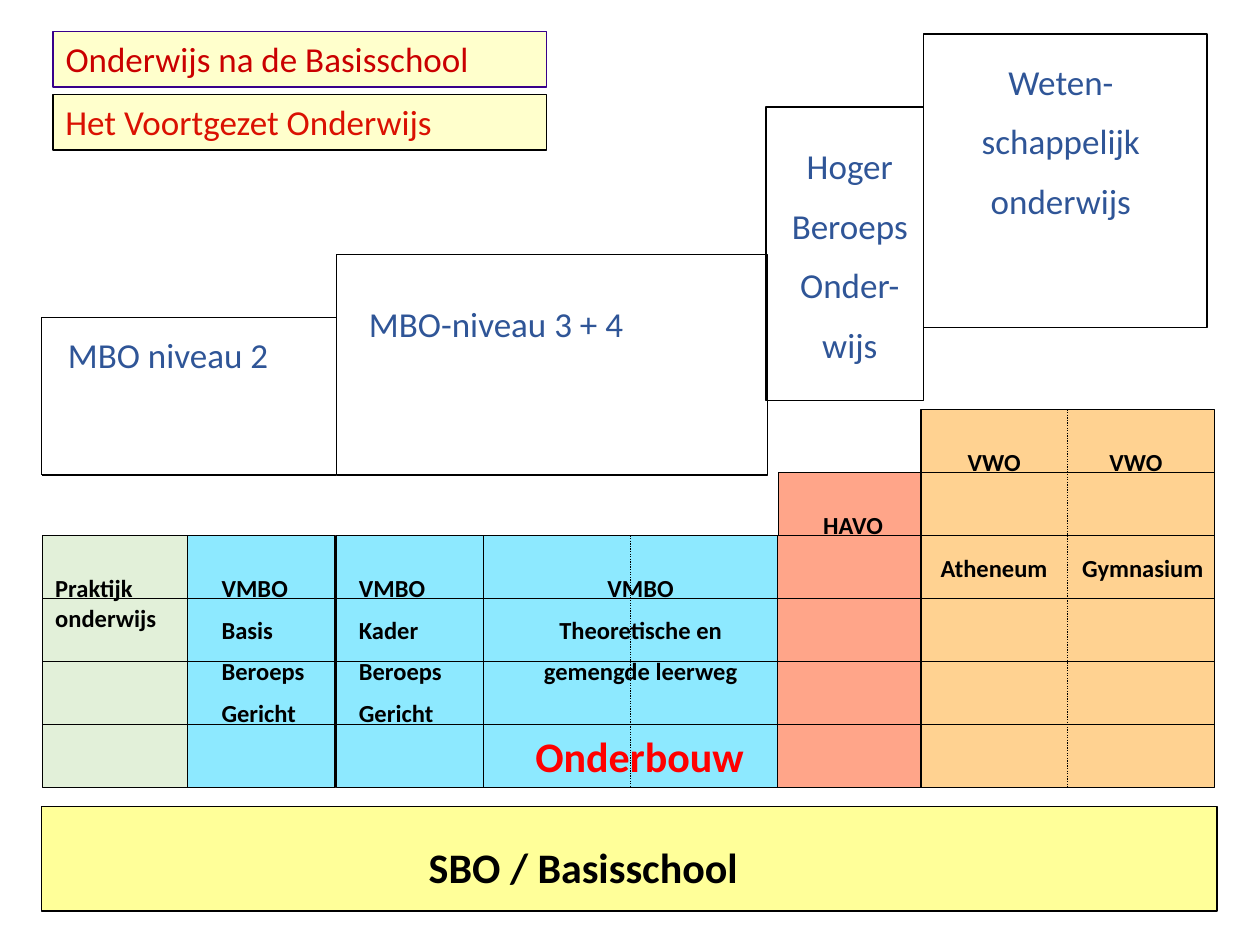
from lxml import etree
from pptx import Presentation
from pptx.dml.color import RGBColor
from pptx.enum import dml, shapes, text
from pptx.oxml.ns import qn
from pptx.util import Inches, Pt

BLACK = RGBColor(0x00, 0x00, 0x00)
PURPLE = RGBColor(0x38, 0x00, 0x8A)
DARK_RED = RGBColor(0xCA, 0x00, 0x00)
RED = RGBColor(0xDA, 0x11, 0x02)
BRIGHT_RED = RGBColor(0xFF, 0x00, 0x00)
BLUE = RGBColor(0x2F, 0x55, 0x97)
CREAM = RGBColor(0xFF, 0xFF, 0xCC)
YELLOW = RGBColor(0xFF, 0xFF, 0x99)
GREEN = RGBColor(0xE2, 0xF0, 0xD9)
CYAN = RGBColor(0x8D, 0xE9, 0xFF)
SALMON = RGBColor(0xFF, 0xA5, 0x89)
ORANGE = RGBColor(0xFF, 0xD2, 0x91)
LEFT, CENTER = text.PP_ALIGN.LEFT, text.PP_ALIGN.CENTER
ROW, BOTTOM = 0.5, 6.25  # height of one school year, foot of the year grid

deck = Presentation()
deck.slide_width, deck.slide_height = Inches(10), Inches(7.5)
page = deck.slides.add_slide(deck.slide_layouts[5])


def add_block(left, top, width, height, fill=None):
    block = page.shapes.add_shape(
        shapes.MSO_SHAPE.RECTANGLE, *map(Inches, (left, top, width, height)))
    block.shadow.inherit = False
    block.line.color.rgb = BLACK
    block.line.width = Pt(0.75)
    if fill is None:
        block.fill.background()
    else:
        block.fill.solid()
        block.fill.fore_color.rgb = fill
    return block


def write(box, words, size, color, bold=False, align=LEFT):
    """Fill a box with one paragraph per line, half a line size apart."""
    frame = box.text_frame
    frame.text = words
    frame.word_wrap = True
    frame.auto_size = text.MSO_AUTO_SIZE.NONE
    frame.vertical_anchor = text.MSO_ANCHOR.TOP
    for index, para in enumerate(frame.paragraphs):
        para.alignment = align
        para.space_before = Pt(size / 2 if index else 0)
        font = para.runs[0].font
        font.name, font.size, font.bold = "Calibri", Pt(size), bold
        font.color.rgb = color


# Headings
title = page.shapes.title
title.left, title.top, title.width, title.height = map(Inches, (0.42, 0.25, 3.92, 0.44))
title.fill.solid()
title.fill.fore_color.rgb = CREAM
title.line.color.rgb = PURPLE
title.line.width = Pt(0.75)
write(title, "Onderwijs na de Basisschool", 20, DARK_RED)
write(add_block(0.42, 0.75, 3.92, 0.44, CREAM), "Het Voortgezet Onderwijs", 20, RED)

# Further education and primary school
for outline in ((2.67, 2.02, 3.42, 1.75), (6.08, 0.85, 1.25, 2.33), (7.33, 0.27, 2.25, 2.33)):
    add_block(*outline)
add_block(0.33, 6.4, 9.33, 0.83, YELLOW)

# Lines as (start, end, dash, begin joint, end joint); a joint is (shape, site)
lines = [
    ((2.67, 2.52), (0.33, 2.52), None, None, None),
    ((0.33, 2.52), (0.33, 3.77), None, None, None),
    ((0.33, 3.77), (2.67, 3.77), None, None, None),
]

# School types built from single-year cells
for left, fill in ((0.34, GREEN), (1.49, CYAN), (2.67, CYAN), (6.16, SALMON)):
    for year in range(1, 5):
        add_block(left, BOTTOM - year * ROW, 1.17, ROW, fill)
add_block(6.18, 3.75, 1.15, ROW, SALMON)

# Double-width school types, ruled by year and split by a dotted line
for left, years, fill in ((3.84, 4, CYAN), (7.31, 6, ORANGE)):
    width, top = 2.33, BOTTOM - years * ROW
    block = add_block(left, top, width, years * ROW, fill)
    for year in range(1, years):
        y = BOTTOM - year * ROW
        halfway = year * 2 == years
        lines.append(((left, y), (left + width, y), None,
                      (block, 1) if halfway else None, (block, 3) if halfway else None))
    middle = left + width / 2
    lines.append(((middle, top), (middle, BOTTOM), dml.MSO_LINE.ROUND_DOT,
                  (block, 0), (block, 2)))

for start, end, dash, begin_joint, end_joint in lines:
    line = page.shapes.add_connector(
        shapes.MSO_CONNECTOR.STRAIGHT, *map(Inches, start + end))
    line.line.color.rgb = BLACK
    line.line.width = Pt(0.75)
    if dash is not None:
        line.line.dash_style = dash
    etree.SubElement(line._element.spPr, qn("a:effectLst"))
    if begin_joint:
        line.begin_connect(*begin_joint)
    if end_joint:
        line.end_connect(*end_joint)

# Labels: place, words, size, colour, bold, alignment
labels = [
    ((2.83, 2.35, 3.33, 0.43), "MBO-niveau 3 + 4", 20, BLUE, False, LEFT),
    ((0.44, 2.6, 2.08, 0.44), "MBO niveau 2", 20, BLUE, False, LEFT),
    ((6.08, 1.1, 1.33, 1.93), "Hoger\nBeroeps\nOnder-\nwijs", 20, BLUE, False, CENTER),
    ((7.42, 0.43, 2, 1.43), "Weten-\nschappelijk\nonderwijs", 20, BLUE, False, CENTER),
    ((2.09, 6.63, 5.08, 0.5), "SBO / Basisschool", 24, BLACK, True, CENTER),
    ((0.34, 4.5, 1.17, 0.57), "Praktijk onderwijs", 14, BLACK, True, LEFT),
    ((1.66, 4.5, 1.08, 1.4), "VMBO\nBasis\nBeroeps\nGericht", 14, BLACK, True, LEFT),
    ((2.75, 4.5, 1, 1.4), "VMBO\nKader\nBeroeps\nGericht", 14, BLACK, True, LEFT),
    ((4, 4.5, 2.17, 1.04), "VMBO\nTheoretische en\ngemengde leerweg", 14, BLACK, True, CENTER),
    ((4.15, 5.75, 2.69, 0.5), "Onderbouw", 24, BRIGHT_RED, True, LEFT),
    ((6.23, 4, 1.08, 0.33), "HAVO", 14, BLACK, True, CENTER),
    ((7.39, 3.5, 1, 0.33), "VWO", 14, BLACK, True, CENTER),
    ((8.64, 3.5, 0.75, 0.33), "VWO", 14, BLACK, True, CENTER),
    ((7.35, 4.34, 1.08, 0.34), "Atheneum", 14, BLACK, True, CENTER),
    ((8.48, 4.34, 1.18, 0.34), "Gymnasium", 14, BLACK, True, CENTER),
]
for place, *wording in labels:
    write(page.shapes.add_textbox(*map(Inches, place)), *wording)

deck.save("out.pptx")
